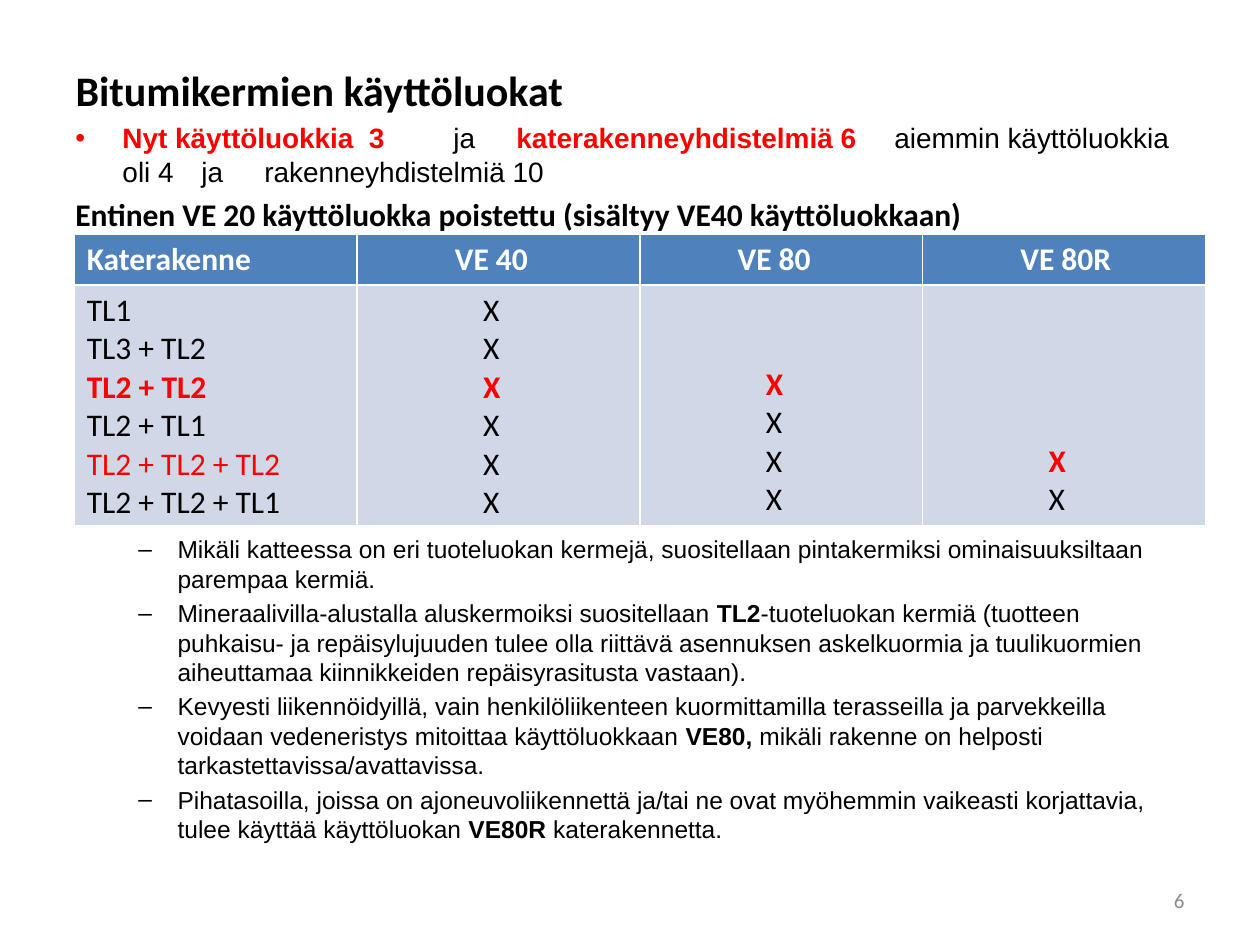
from lxml import etree
from pptx import Presentation
from pptx.dml.color import RGBColor
from pptx.enum.text import MSO_ANCHOR, MSO_AUTO_SIZE, PP_ALIGN
from pptx.oxml.ns import qn
from pptx.util import Cm, Pt

LEFT, RIGHT = PP_ALIGN.LEFT, PP_ALIGN.RIGHT
TOP, MIDDLE, BOTTOM = MSO_ANCHOR.TOP, MSO_ANCHOR.MIDDLE, MSO_ANCHOR.BOTTOM
NO_FIT = MSO_AUTO_SIZE.NONE
TITLE_ONLY = 5

BLACK, WHITE, RED, GREY = "000000", "FFFFFF", "FF0000", "8C8C8C"
HEADER_BLUE, BODY_BLUE = "4F81BD", "D0D8E8"

HEADERS = ["Katerakenne", "VE 40", "VE 80", "VE 80R"]
# Roof structure, colour, bold, and how many use classes accept it
STRUCTURES = [
    ("TL1", BLACK, False, 1),
    ("TL3 + TL2", BLACK, False, 1),
    ("TL2 + TL2", RED, True, 2),
    ("TL2 + TL1", BLACK, False, 2),
    ("TL2 + TL2 + TL2", RED, False, 3),
    ("TL2 + TL2 + TL1", BLACK, False, 3),
]
# Marks shown in bold red: (structure, use class column)
HIGHLIGHTS = {("TL2 + TL2", 1), ("TL2 + TL2", 2), ("TL2 + TL2 + TL2", 3)}

# Each note: text before, bold part, text after
NOTES = [
    ("Mikäli katteessa on eri tuoteluokan kermejä, suositellaan pintakermiksi "
     "ominaisuuksiltaan parempaa kermiä.", "", ""),
    ("Mineraalivilla-alustalla aluskermoiksi suositellaan ", "TL2",
     "-tuoteluokan kermiä (tuotteen puhkaisu- ja repäisylujuuden tulee olla "
     "riittävä asennuksen askelkuormia ja tuulikuormien aiheuttamaa "
     "kiinnikkeiden repäisyrasitusta vastaan)."),
    ("Kevyesti liikennöidyillä, vain henkilöliikenteen kuormittamilla "
     "terasseilla ja parvekkeilla voidaan vedeneristys mitoittaa "
     "käyttöluokkaan ", "VE80, ",
     "mikäli rakenne on helposti tarkastettavissa/avattavissa."),
    ("Pihatasoilla, joissa on ajoneuvoliikennettä ja/tai ne ovat myöhemmin "
     "vaikeasti korjattavia, tulee käyttää käyttöluokan ", "VE80R",
     " katerakennetta."),
]


def rgb(value):
    return RGBColor.from_string(value)


def add_text(paragraph, text, size=18, font="Calibri", color=BLACK, bold=False):
    run = paragraph.add_run()
    run.text = text
    run.font.size = Pt(size)
    run.font.name = font
    run.font.color.rgb = rgb(color)
    run.font.bold = bold


def paragraphs(frame, count):
    """Return count paragraphs, the first being the one already present."""
    return [frame.paragraphs[0]] + [frame.add_paragraph() for _ in range(count - 1)]


def set_bullet(paragraph, mark, indent, hanging):
    props = paragraph._p.get_or_add_pPr()
    props.set("marL", str(indent))
    props.set("indent", str(-hanging))
    etree.SubElement(props, qn("a:buFont")).set("typeface", "Arial")
    etree.SubElement(props, qn("a:buChar")).set("char", mark)


def add_frame(slide, left, top, width, height, anchor=TOP):
    frame = slide.shapes.add_textbox(left, top, width, height).text_frame
    frame.word_wrap = True
    frame.vertical_anchor = anchor
    return frame


def add_title(slide):
    title = slide.shapes.title
    title.left, title.top = Cm(1.27), Cm(1.17)
    title.width, title.height = Cm(22.86), Cm(1.3)
    frame = title.text_frame
    frame.auto_size = NO_FIT
    frame.vertical_anchor = TOP
    frame.paragraphs[0].alignment = LEFT
    add_text(frame.paragraphs[0], "Bitumikermien käyttöluokat", size=24, bold=True)


def add_lead(slide):
    frame = add_frame(slide, Cm(1.27), Cm(2.31), Cm(22.86), Cm(2.4))
    change, removed = paragraphs(frame, 2)
    for text, color, bold in [
        ("Nyt käyttöluokkia  3 ", RED, True),
        ("\tja \t", BLACK, False),
        ("katerakenneyhdistelmiä 6 ", RED, True),
        ("\taiemmin käyttöluokkia oli 4 \tja \trakenneyhdistelmiä 10", BLACK, False),
    ]:
        add_text(change, text, size=16, font="Arial", color=color, bold=bold)
    set_bullet(change, "•", Cm(0.95), Cm(0.95))
    removed.space_before = Pt(4)
    add_text(removed, "Entinen VE 20 käyttöluokka poistettu "
                      "(sisältyy VE40 käyttöluokkaan)", bold=True)


def fill_cell(cell, color, lines, margin, anchor):
    """Fill a cell with lines of (text, colour, bold)."""
    cell.fill.solid()
    cell.fill.fore_color.rgb = rgb(color)
    cell.margin_left = margin
    cell.vertical_anchor = anchor
    for paragraph, (text, text_color, bold) in zip(
            paragraphs(cell.text_frame, len(lines)), lines):
        add_text(paragraph, text, color=text_color, bold=bold)


def add_class_table(slide):
    table = slide.shapes.add_table(
        2, len(HEADERS), Cm(1.5), Cm(4.72), Cm(22.8), Cm(5.87)).table
    table.rows[0].height, table.rows[1].height = Cm(1.03), Cm(4.84)
    for column, header in enumerate(HEADERS):
        table.columns[column].width = Cm(5.7)
        if column == 0:
            header_margin = body_margin = Cm(0.25)
            lines = [(name, color, bold) for name, color, bold, _ in STRUCTURES]
        else:
            header_margin, body_margin = Cm(1.97), Cm(2.54)
            lines = []
            for name, _, _, accepted in STRUCTURES:
                if column <= accepted:
                    marked = (name, column) in HIGHLIGHTS
                    lines.append(("X", RED if marked else BLACK, marked))
        fill_cell(table.cell(0, column), HEADER_BLUE,
                  [(header, WHITE, True)], header_margin, TOP)
        # Marks line up with the last structures, so they rest on the bottom
        fill_cell(table.cell(1, column), BODY_BLUE, lines, body_margin, BOTTOM)


def add_notes(slide):
    frame = add_frame(slide, Cm(1.27), Cm(10.65), Cm(22.86), Cm(6.6))
    for index, (paragraph, note) in enumerate(zip(paragraphs(frame, len(NOTES)), NOTES)):
        if index:
            paragraph.space_before = Pt(2.8)
        for text, bold in zip(note, (False, True, False)):
            if text:
                add_text(paragraph, text, size=14, font="Arial", bold=bold)
        set_bullet(paragraph, "–", Cm(2.06), Cm(0.79))


def add_page_number(slide):
    frame = add_frame(slide, Cm(18.2), Cm(17.65), Cm(5.93), Cm(1.01), MIDDLE)
    frame.paragraphs[0].alignment = RIGHT
    add_text(frame.paragraphs[0], "6", size=12, color=GREY)


def main():
    deck = Presentation()
    deck.slide_width, deck.slide_height = Cm(25.4), Cm(19.05)
    slide = deck.slides.add_slide(deck.slide_layouts[TITLE_ONLY])
    add_title(slide)
    add_lead(slide)
    add_class_table(slide)
    add_notes(slide)
    add_page_number(slide)
    deck.save("out.pptx")


if __name__ == "__main__":
    main()
